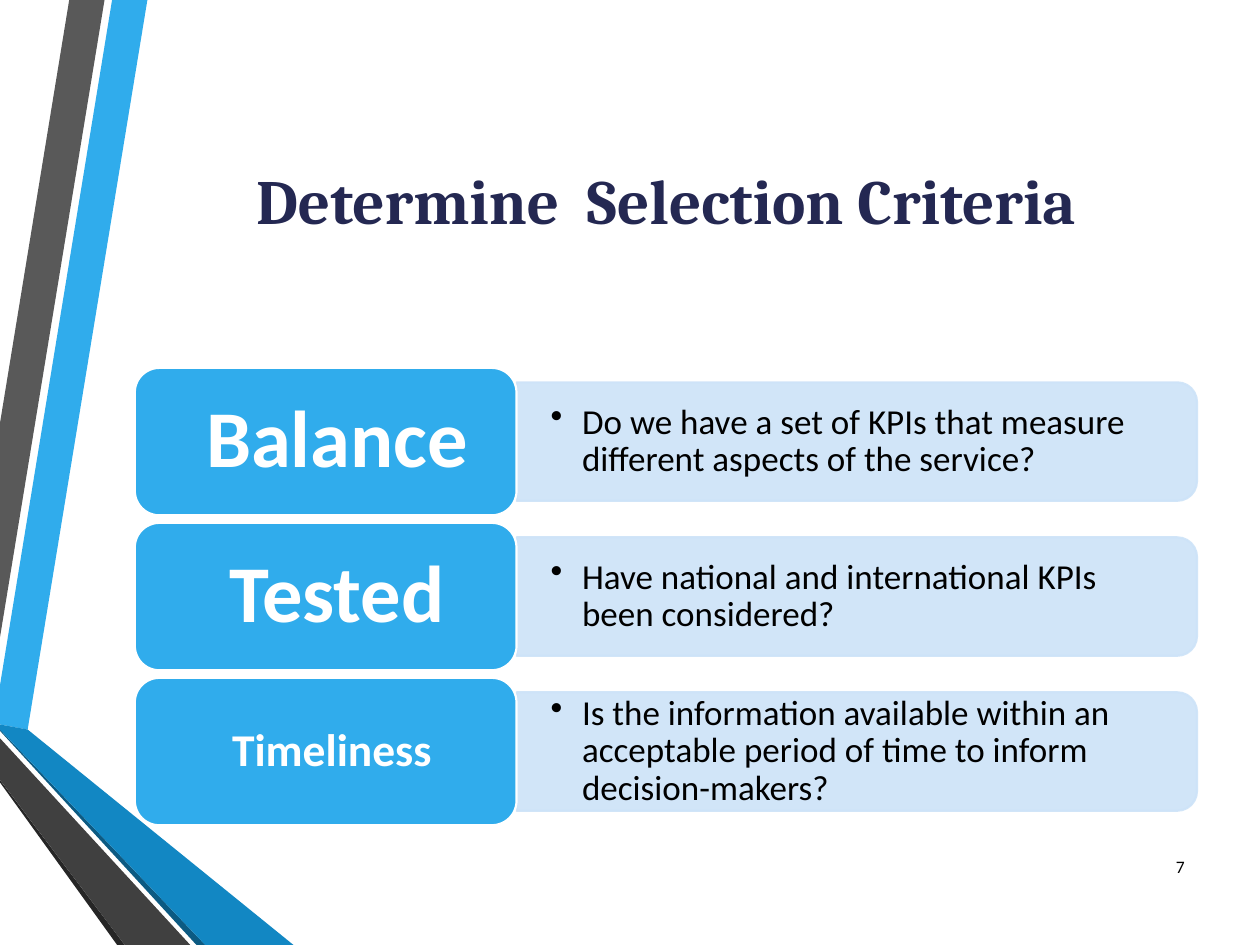
from lxml import etree
from pptx import Presentation
from pptx.dml.color import RGBColor
from pptx.enum.shapes import MSO_SHAPE
from pptx.enum.text import MSO_ANCHOR, PP_ALIGN
from pptx.oxml.ns import qn
from pptx.util import Inches, Pt

ROUND, ROUND_TOP = MSO_SHAPE.ROUNDED_RECTANGLE, MSO_SHAPE.ROUND_2_SAME_RECTANGLE
CENTER, LEFT, RIGHT = PP_ALIGN.CENTER, PP_ALIGN.LEFT, PP_ALIGN.RIGHT

COLORS = {
    "blue": "30ACEC", "mid blue": "1287C3", "deep blue": "0C5A82",
    "gray": "595959", "dark gray": "404040", "charcoal": "262626",
    "pale": "CDE3F8", "navy": "242852", "white": "FFFFFF", "black": "000000",
}

TITLE = "Determine  Selection Criteria"
# label, label size, label insets, question
CRITERIA = [
    ("Balance ", 46, (0.25, 0.16),
     "Do we have a set of KPIs that measure different aspects of the service?"),
    ("Tested ", 46, (0.25, 0.16),
     "Have national and international KPIs been considered?"),
    ("Timeliness ", 26, (0.17, 0.11),
     "Is the information available within an acceptable period of time to inform decision-makers?"),
]
PAGE = "7"

# Ribbon outlines, in hundredths of an inch
RIBBONS = [
    ("blue", [(0, 544), (0, 575), (22, 579), (117, 0), (89, 0)]),
    ("gray", [(83, 0), (55, 0), (0, 336), (0, 506)]),
    ("charcoal", [(0, 619), (0, 621), (93, 750), (99, 750)]),
    ("deep blue", [(0, 579), (0, 580), (156, 750), (163, 750)]),
    ("mid blue", [(0, 579), (163, 750), (233, 750), (22, 579), (0, 575)]),
    ("dark gray", [(0, 619), (99, 750), (151, 750), (0, 586)]),
]

LEFT_EDGE, RIGHT_EDGE, TOP = 1.07, 9.5, 2.92
LABEL_W, LABEL_H, PITCH = 3.03, 1.17, 1.23
BAR_H, TEXT_H = 0.94, 0.85


def rgb(name):
    return RGBColor.from_string(COLORS[name])


def paint(shape, fill, line=None, alpha=None):
    shape.shadow.inherit = False
    shape.fill.solid()
    shape.fill.fore_color.rgb = rgb(fill)
    if line:
        shape.line.color.rgb = rgb(line)
        shape.line.width = Pt(1.25)
    else:
        shape.line.fill.background()
    if alpha:
        for clr in shape._element.spPr.iter(qn("a:srgbClr")):
            etree.SubElement(clr, qn("a:alpha")).set("val", str(alpha * 1000))


def write(shape, text, size, color="black", font="Calibri", bold=False,
          align=LEFT, insets=(0.1, 0.05), spacing=None, bullet=False, rtl=False):
    tf = shape.text_frame
    tf.word_wrap = True
    tf.vertical_anchor = MSO_ANCHOR.MIDDLE
    tf.margin_left = tf.margin_right = Inches(insets[0])
    tf.margin_top = tf.margin_bottom = Inches(insets[1])
    p = tf.paragraphs[0]
    p.alignment = align
    if spacing:
        p.line_spacing = spacing
    r = p.add_run()
    r.text = text
    r.font.size, r.font.name, r.font.bold = Pt(size), font, bold
    r.font.color.rgb = rgb(color)
    pPr = p._p.get_or_add_pPr()
    if rtl:
        pPr.set("rtl", "1")
    if bullet:
        p.level = 1
        pPr.set("marL", str(Inches(0.25)))
        pPr.set("indent", str(-Inches(0.25)))
        etree.SubElement(pPr, qn("a:buChar")).set("char", "•")


def add_criterion(s, row, label, size, insets, question):
    x = LEFT_EDGE + LABEL_W
    top = TOP + row * PITCH
    mid = top + LABEL_H / 2
    bar_w = RIGHT_EDGE - x
    # The bar stands upright and is turned so its round corners face right
    bar = s.shapes.add_shape(
        ROUND_TOP, Inches(x + (bar_w - BAR_H) / 2), Inches(mid - bar_w / 2),
        Inches(BAR_H), Inches(bar_w))
    bar.rotation = 90
    paint(bar, "pale", "pale", alpha=90)
    box = s.shapes.add_textbox(Inches(x), Inches(mid - TEXT_H / 2),
                               Inches(bar_w - 0.04), Inches(TEXT_H))
    write(box, question, 20, insets=(0.27, 0.14), spacing=0.9, bullet=True)
    pill = s.shapes.add_shape(ROUND, Inches(LEFT_EDGE), Inches(top),
                              Inches(LABEL_W), Inches(LABEL_H))
    paint(pill, "blue", "white")
    write(pill, label, size, color="white", bold=True, align=CENTER,
          insets=insets, spacing=0.9, rtl=True)


def main():
    prs = Presentation()
    prs.slide_width, prs.slide_height = Inches(10), Inches(7.5)
    s = prs.slides.add_slide(prs.slide_layouts[5])

    for color, (start, *rest) in RIBBONS:
        outline = s.shapes.build_freeform(*start, scale=Inches(0.01))
        outline.add_line_segments(rest, close=True)
        paint(outline.convert_to_shape(), color)

    title = s.shapes.title
    title.left, title.top = Inches(LEFT_EDGE), Inches(0.5)
    title.width, title.height = Inches(RIGHT_EDGE - LEFT_EDGE), Inches(2.17)
    write(title, TITLE, 36, color="navy", font="Cambria", bold=True, align=CENTER)

    for row, criterion in enumerate(CRITERIA):
        add_criterion(s, row, *criterion)

    number = s.shapes.add_textbox(Inches(9.03), Inches(6.68), Inches(0.47), Inches(0.4))
    write(number, PAGE, 10, align=RIGHT)
    prs.save("out.pptx")


if __name__ == "__main__":
    main()
